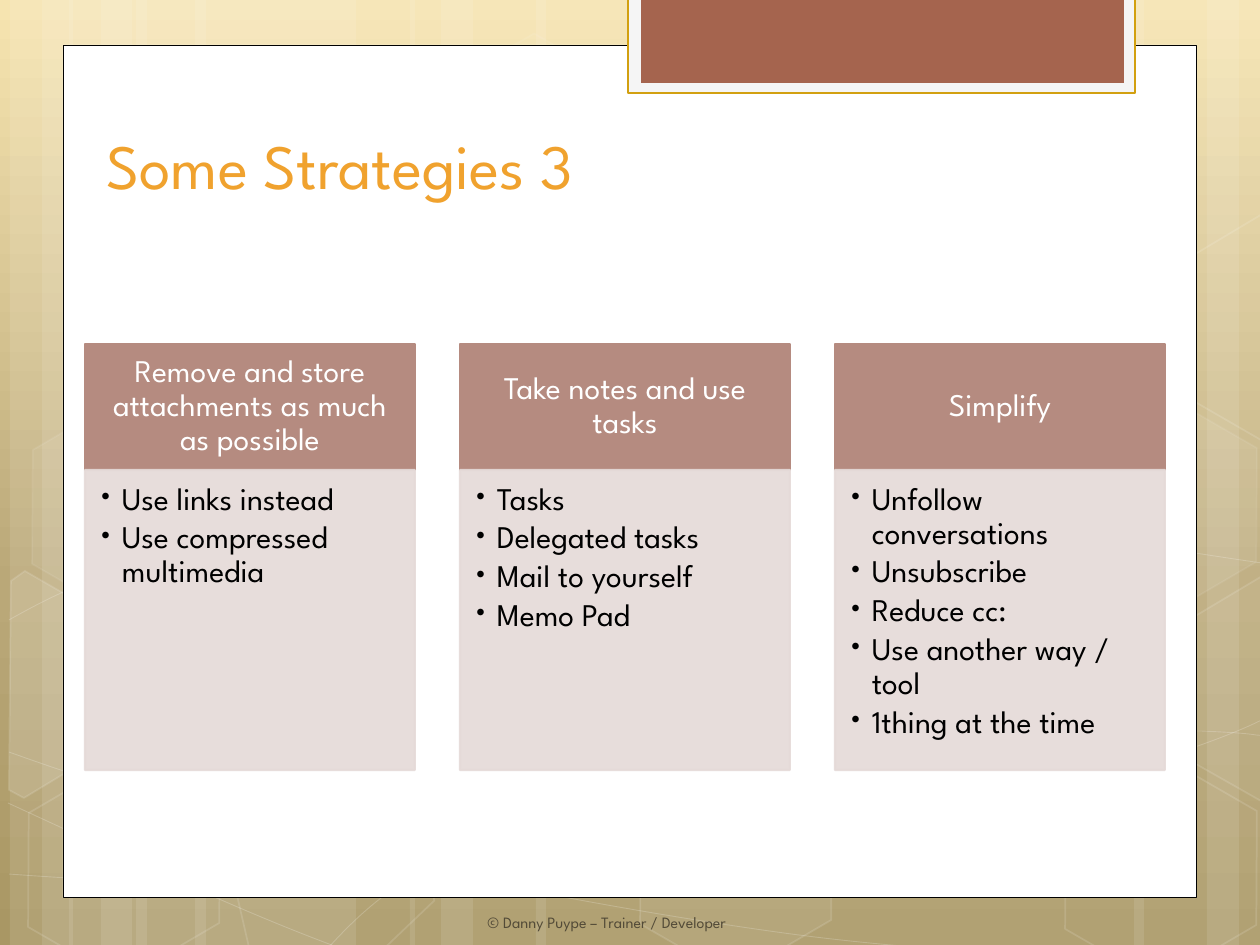
import copy
from dataclasses import dataclass

import lxml.etree
import pptx
import pptx.dml.color
import pptx.enum.shapes
import pptx.enum.text
import pptx.oxml.ns
import pptx.util

EMU_PER_PX = 914400 / 126
PAGE_WIDTH, PAGE_HEIGHT = 1260, 945
SHAPE = pptx.enum.shapes.MSO_SHAPE
ALIGN = pptx.enum.text.PP_ALIGN
ANCHOR = pptx.enum.text.MSO_ANCHOR


@dataclass(frozen=True)
class Theme:
    font: str = "League Spartan"
    title_size: int = 36
    text_size: int = 18
    footer_size: int = 9
    white: str = "FFFFFF"
    black: str = "000000"
    title: str = "F0A22E"
    footer: str = "534B38"
    tab_edge: str = "D2A010"
    tab_rim: str = "F5F5F5"
    tab: str = "A5644E"
    card_head: str = "B58B80"
    card_body: str = "E5DAD8"
    sky: tuple = ((0, "F6E4B0"), (0.62, "BAA878"), (1, "A99764"))


THEME = Theme()

# left, width
BANDS = [(136, 220), (10, 63), (42, 105), (195, 220), (69, 63), (101, 105),
         (924, 220), (1207, 63), (1134, 105), (536, 388), (410, 63), (441, 105)]

# start point, then two control points and an end point for each cubic
CURVES = [
    [(9, 874), (77, 879), (145, 883), (239, 882), (334, 879), (451, 878), (577, 864),
     (703, 852), (882, 827), (998, 803), (1113, 777), (1231, 738), (1269, 716)],
    [(9, 620), (45, 600), (82, 580), (152, 561), (224, 542), (326, 513), (437, 503),
     (549, 494), (685, 493), (824, 503), (963, 514), (1193, 554), (1269, 564)],
    [(8, 803), (160, 873), (311, 945), (421, 974)],
    [(9, 752), (48, 766), (88, 780), (161, 800), (234, 822), (344, 853), (450, 874),
     (554, 897), (687, 920), (791, 934), (896, 948), (1008, 954), (1075, 958),
     (1140, 961), (1158, 960), (1191, 959), (1223, 959), (1246, 957), (1269, 954)],
    [(305, 974), (328, 948), (350, 922), (381, 898), (411, 874), (454, 849), (489, 832),
     (524, 814), (546, 805), (592, 793), (638, 779), (722, 760), (766, 752),
     (811, 744), (818, 743), (857, 740), (896, 736), (958, 733), (1000, 731),
     (1045, 730), (1116, 731), (1116, 731), (1145, 731), (1173, 731), (1201, 731),
     (1223, 732), (1244, 733), (1256, 735), (1268, 736), (1264, 736), (1268, 736)],
]

# left, top, rotation, fill opacity (0 for none), line opacity
HEXAGONS = [(421, 47, 30, 4, 8), (626, 766, 30, 6, 12), (14, 769, 30, 0, 12),
            (18, 406, 30, 7, 8), (219, 770, 16.7, 0, 12), (949, 590, 30, 10, 12),
            (1051, 771, 30, 0, 12), (1051, 408, 30, 7, 8)]

# corner points, fill opacity
CUT_HEXAGONS = [
    ([(11, 581), (25, 571), (122, 627), (120, 740), (24, 798), (9, 790)], 10),
    ([(1167, 633), (1264, 575), (1273, 581), (1270, 796), (1261, 801), (1164, 746)], 4),
    ([(1167, 271), (1264, 213), (1274, 219), (1270, 435), (1261, 440), (1164, 384)], 0),
]

CARDS = [
    ("Remove and store attachments as much as possible",
     ["Use links instead", "Use compressed multimedia"]),
    ("Take notes and use tasks",
     ["Tasks", "Delegated tasks", "Mail to yourself", "Memo Pad"]),
    ("Simplify",
     ["Unfollow conversations", "Unsubscribe", "Reduce cc:",
      "Use another way / tool", "1thing at the time"]),
]


def px(length):
    return pptx.util.Emu(round(length * EMU_PER_PX))


def rgb(code):
    return pptx.dml.color.RGBColor.from_string(code)


def add_element(parent, tag, **attributes):
    return lxml.etree.SubElement(parent, pptx.oxml.ns.qn(tag), attributes)


def set_opacity(fill_parent, percent):
    for color in fill_parent.xpath("./a:solidFill/a:srgbClr"):
        add_element(color, "a:alpha", val=str(percent * 1000))


def paint(shape, fill=None, line=None, width=1.0, fill_opacity=100, line_opacity=100):
    shape.shadow.inherit = False
    properties = shape.element.spPr
    for target, color, opacity in ((shape.fill, fill, fill_opacity),
                                   (shape.line.fill, line, line_opacity)):
        if color is None or opacity == 0:
            target.background()
            continue
        target.solid()
        target.fore_color.rgb = rgb(color)
        if opacity < 100:
            set_opacity(properties if target is shape.fill else properties.ln, opacity)
    if line:
        shape.line.width = pptx.util.Pt(width)


def add_block(page, box, kind=SHAPE.RECTANGLE, **look):
    shape = page.shapes.add_shape(kind, *map(px, box))
    paint(shape, **look)
    return shape


def add_outline(page, points, close, **look):
    start, *rest = [(px(x), px(y)) for x, y in points]
    builder = page.shapes.build_freeform(*start, scale=1.0)
    builder.add_line_segments(rest, close=close)
    shape = builder.convert_to_shape()
    paint(shape, **look)
    return shape


def bend(shape):
    """Turn each three straight segments into one cubic curve."""
    segments = shape.element.xpath(".//a:path/a:lnTo")
    for i in range(0, len(segments), 3):
        cubic = add_element(segments[i].getparent(), "a:cubicBezTo")
        for segment in segments[i:i + 3]:
            cubic.append(segment[0])
            segment.getparent().remove(segment)


def write(shape, lines, size, color, bullet=None, para_format=None, **frame_format):
    frame = shape.text_frame
    for name, value in {"word_wrap": True, **frame_format}.items():
        setattr(frame, name, value)
    for i, line in enumerate(lines):
        para = frame.paragraphs[0] if i == 0 else frame.add_paragraph()
        for name, value in {"alignment": ALIGN.LEFT, **(para_format or {})}.items():
            setattr(para, name, value)
        if bullet:
            add_bullet(para, bullet)
        span = para.add_run()
        span.text = line
        for name, value in {"name": THEME.font, "size": pptx.util.Pt(size)}.items():
            setattr(span.font, name, value)
        span.font.color.rgb = rgb(color)


def add_bullet(para, character, indent=24):
    properties = para._p.get_or_add_pPr()
    properties.set("marL", str(px(indent)))
    properties.set("indent", str(-px(indent)))
    add_element(properties, "a:buFont", typeface=THEME.font)
    add_element(properties, "a:buChar", char=character)


def margins(left, top, right, bottom):
    return {"margin_left": px(left), "margin_top": px(top),
            "margin_right": px(right), "margin_bottom": px(bottom)}


def add_text(page, box, line, size, color, **frame_format):
    write(page.shapes.add_textbox(*map(px, box)), [line], size, color, **frame_format)


def add_background(page):
    fill = page.background.fill
    fill.gradient()
    fill.gradient_angle = 270
    stops = page.element.xpath(".//a:gsLst")[0]
    stops.insert(1, copy.deepcopy(stops[0]))
    for stop, (position, color) in zip(fill.gradient_stops, THEME.sky):
        stop.position = position
        stop.color.rgb = rgb(color)


def add_decoration(page):
    white = THEME.white
    for left, width in BANDS:
        add_block(page, (left, 0, width, 975), fill=white, fill_opacity=10)
    for curve in CURVES:
        bend(add_outline(page, curve, False, line=white, width=0.5, line_opacity=20))
    for left, top, rotation, fill_opacity, line_opacity in HEXAGONS:
        hexagon = add_block(page, (left, top, 220, 198), SHAPE.HEXAGON, fill=white, line=white,
                            fill_opacity=fill_opacity, line_opacity=line_opacity)
        hexagon.adjustments[0], hexagon.adjustments[1] = 0.285, 1.155
        hexagon.rotation = rotation
    for corners, fill_opacity in CUT_HEXAGONS:
        add_outline(page, corners, True, fill=white, line=white,
                    fill_opacity=fill_opacity, line_opacity=12)


def add_card(page, left, heading, items, top=344, width=330, head_height=126, body_height=300):
    head = add_block(page, (left, top, width, head_height),
                     fill=THEME.card_head, line=THEME.card_head, width=1.25)
    write(head, [heading], THEME.text_size, THEME.white, vertical_anchor=ANCHOR.MIDDLE,
          para_format={"alignment": ALIGN.CENTER, "line_spacing": 0.9},
          **margins(18, 10, 18, 11))
    body = add_block(page, (left, top + head_height, width, body_height), fill=THEME.card_body,
                     line=THEME.card_body, width=1.25, fill_opacity=90, line_opacity=90)
    write(body, items, THEME.text_size, THEME.black, bullet="•", vertical_anchor=ANCHOR.TOP,
          para_format={"line_spacing": 0.9, "space_after": pptx.util.Pt(2.7)},
          **margins(13, 13, 18, 20))


def main():
    deck = pptx.Presentation()
    deck.slide_width, deck.slide_height = px(PAGE_WIDTH), px(PAGE_HEIGHT)
    page = deck.slides.add_slide(deck.slide_layouts[6])
    add_background(page)
    add_decoration(page)
    add_block(page, (63, 45, 1134, 853), fill=THEME.white, line=THEME.black, width=0.5)
    add_block(page, (628, -2, 507, 95), fill=THEME.tab_rim, line=THEME.tab_edge, width=1.25)
    add_block(page, (641, -2, 483, 85), fill=THEME.tab)
    add_text(page, (475, 907, 310, 31), "© Danny Puype – Trainer / Developer",
             THEME.footer_size, THEME.footer, word_wrap=False,
             auto_size=pptx.enum.text.MSO_AUTO_SIZE.SHAPE_TO_FIT_TEXT)
    for i, (heading, items) in enumerate(CARDS):
        add_card(page, 85 + i * 375, heading, items)
    add_text(page, (94, 125, 968, 83), "Some Strategies 3", THEME.title_size, THEME.title,
             vertical_anchor=ANCHOR.BOTTOM)
    deck.save("out.pptx")


if __name__ == "__main__":
    main()
